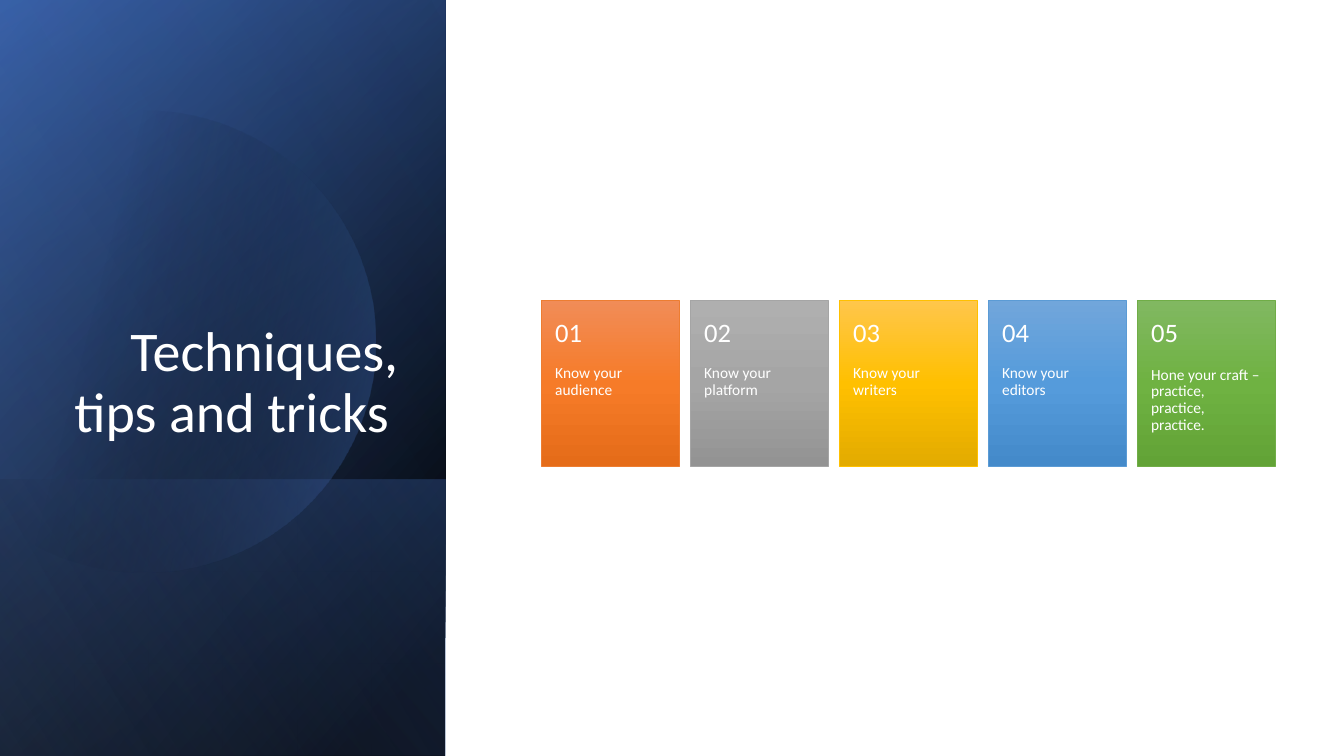
from math import acos, cos, sin

from lxml.etree import SubElement
from pptx import Presentation
from pptx.dml.color import RGBColor
from pptx.enum.shapes import MSO_SHAPE
from pptx.enum.text import MSO_ANCHOR as Anchor, PP_ALIGN as Align
from pptx.oxml.ns import qn
from pptx.util import Pt

COLORS = {
    "white": "FFFFFF",
    "black": "000000",
    "navy": "2F5597",
    "blue": "4472C4",
    "pale_blue": "8FAADC",
}
SLIDE_W, SLIDE_H = 960, 540
SIDEBAR_W = 318.24
BAND_TOP = 342.7

# Each tip: wording, gradient from top to bottom, outline
TIPS = [
    ("Know your audience", ("F18C57", "F67B28", "E56C19"), "ED7D31"),
    ("Know your platform", ("AFAFAF", "A5A5A5", "939393"), "A5A5A5"),
    ("Know your writers", ("FFC64B", "FFC000", "E3AB00"), "FFC000"),
    ("Know your editors", ("71A6DB", "559BDB", "448ACA"), "5B9BD5"),
    ("Hone your craft – practice, practice, practice.",
     ("81B861", "6FB242", "62A336"), "70AD47"),
]
CARD_LEFT, CARD_TOP, CARD_STEP = 386.6, 214.6, 106.4
CARD_W, CARD_H, NUMBER_H = 98.8, 118.4, 47.4


class SlideBuilder:
    font = "Calibri"

    def __init__(self, slide):
        self.shapes = slide.shapes

    def shade(self, shape, stops, angle):
        """Gradient of (position %, hex, opacity %) stops; angle is clockwise."""
        shape.shadow.inherit = False
        shape.line.fill.background()
        shape.fill.gradient()
        shape.fill.gradient_angle = (360 - angle) % 360
        stop_list = shape.element.spPr.find(qn("a:gradFill")).find(qn("a:gsLst"))
        for default_stop in list(stop_list):
            stop_list.remove(default_stop)
        for position, color, opacity in stops:
            stop = SubElement(stop_list, qn("a:gs"), pos=str(position * 1000))
            rgb = SubElement(stop, qn("a:srgbClr"), val=color)
            if opacity < 100:
                SubElement(rgb, qn("a:alpha"), val=str(opacity * 1000))

    def rect(self, left, top, width, height, stops, angle):
        shape = self.shapes.add_shape(
            MSO_SHAPE.RECTANGLE, Pt(left), Pt(top), Pt(width), Pt(height))
        self.shade(shape, stops, angle)
        return shape

    def turned_panel(self, top, height, stops, angle):
        """Sidebar-wide panel, mirrored and turned a quarter, so its gradient turns too."""
        left = (SIDEBAR_W - height) / 2
        panel = self.rect(left, top - left, height, SIDEBAR_W, stops, angle)
        panel.rotation = 90
        panel.element.spPr.find(qn("a:xfrm")).set("flipH", "1")

    def clipped_circle(self, center_x, center_y, radius, stops, angle):
        """Circle cut off by the left edge of the slide."""
        reach = acos(-center_x / radius)
        steps = 90
        angles = [reach * (2 * i / steps - 1) for i in range(steps + 1)]
        points = [(Pt(center_x + radius * cos(a)), Pt(center_y + radius * sin(a)))
                  for a in angles]
        outline = self.shapes.build_freeform(*points[0])
        outline.add_line_segments(points[1:], close=True)
        self.shade(outline.convert_to_shape(), stops, angle)

    def text(self, left, top, width, height, wording, size,
             margins=(7.2, 3.6, 7.2, 3.6), anchor=Anchor.TOP, align=Align.LEFT):
        box = self.shapes.add_textbox(Pt(left), Pt(top), Pt(width), Pt(height))
        frame = box.text_frame
        frame.text = wording
        frame.word_wrap = True
        frame.vertical_anchor = anchor
        (frame.margin_left, frame.margin_top,
         frame.margin_right, frame.margin_bottom) = map(Pt, margins)
        paragraph = frame.paragraphs[0]
        paragraph.alignment = align
        paragraph.line_spacing = 0.9
        for run in paragraph.runs:
            run.font.name = self.font
            run.font.size = Pt(size)
            run.font.color.rgb = RGBColor.from_string(COLORS["white"])

    def card(self, left, number, wording, gradient, outline):
        stops = [(position, color, 100)
                 for position, color in zip((0, 50, 100), gradient)]
        tile = self.rect(left, CARD_TOP, CARD_W, CARD_H, stops, 90)
        tile.line.color.rgb = RGBColor.from_string(outline)
        tile.line.width = Pt(0.5)
        self.text(left, CARD_TOP + NUMBER_H, CARD_W, CARD_H - NUMBER_H,
                  wording, 11, margins=(10, 0, 10, 26))
        self.text(left, CARD_TOP, CARD_W, NUMBER_H, f"{number:02}", 19,
                  margins=(10, 13, 10, 13), anchor=Anchor.MIDDLE)


def main():
    deck = Presentation()
    deck.slide_width, deck.slide_height = Pt(SLIDE_W), Pt(SLIDE_H)
    builder = SlideBuilder(deck.slides.add_slide(deck.slide_layouts[6]))
    black, blue = COLORS["black"], COLORS["blue"]

    builder.turned_panel(
        0, SLIDE_H, [(8, black, 100), (100, COLORS["navy"], 100)], 50)
    builder.turned_panel(0, SLIDE_H, [(0, black, 0), (99, blue, 46)], 30)
    builder.turned_panel(
        BAND_TOP, SLIDE_H - BAND_TOP, [(2, blue, 29), (100, black, 30)], 130)
    builder.clipped_circle(103, 244, 165, [(29, black, 0), (100, blue, 43)], 14)
    builder.turned_panel(
        0, SLIDE_H, [(0, black, 0), (99, COLORS["pale_blue"], 11)], 120)
    builder.text(46, 132.5, 245.5, 188.6, "Techniques, tips and tricks\t", 40,
                 anchor=Anchor.BOTTOM, align=Align.RIGHT)

    for index, (wording, gradient, outline) in enumerate(TIPS):
        builder.card(CARD_LEFT + index * CARD_STEP, index + 1,
                     wording, gradient, outline)

    deck.save("out.pptx")


if __name__ == "__main__":
    main()
